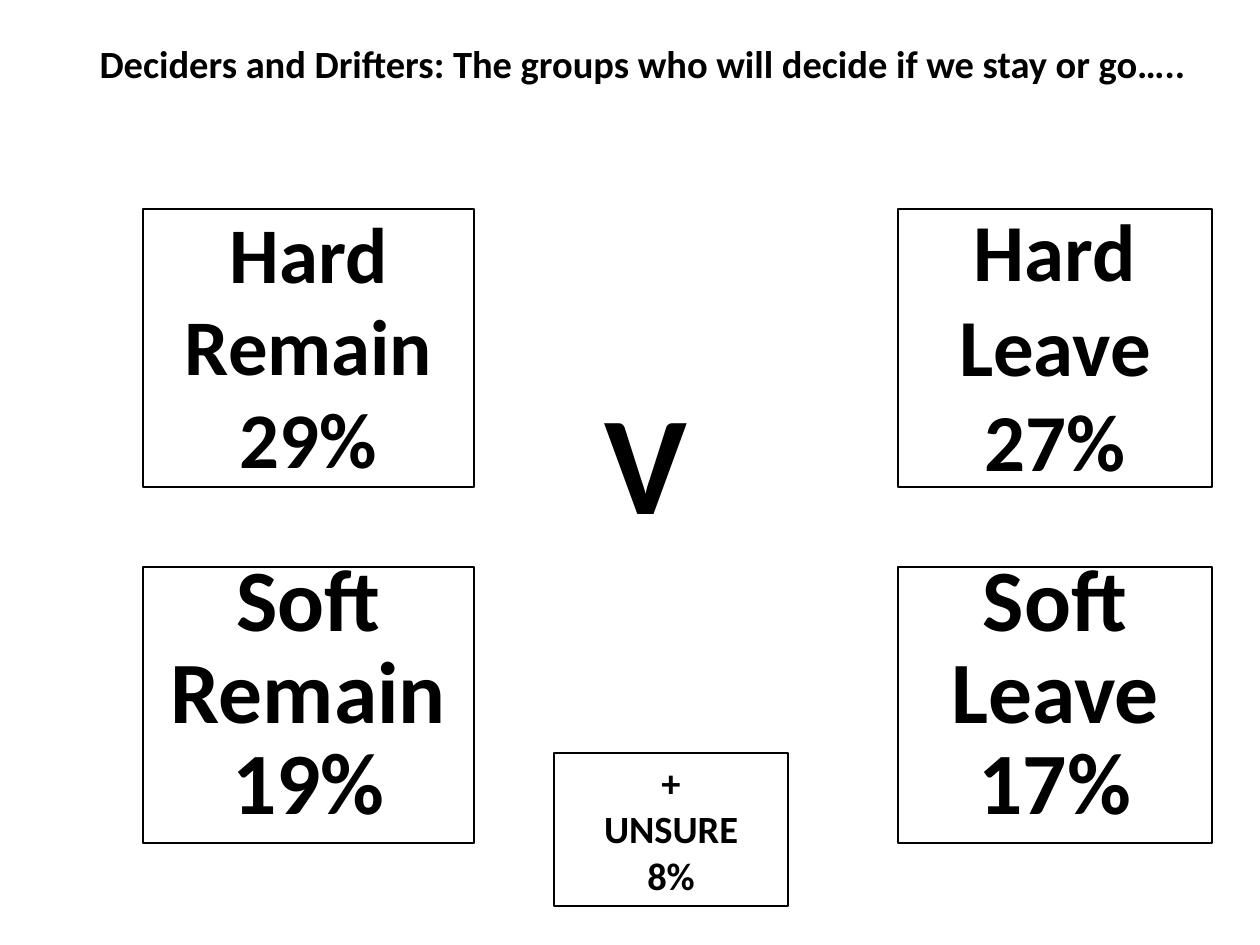
from pptx import Presentation
from pptx.dml.color import RGBColor
from pptx.enum.shapes import MSO_SHAPE
from pptx.enum.text import MSO_ANCHOR, MSO_AUTO_SIZE, PP_ALIGN
from pptx.util import Emu, Pt

COLORS = {"ink": "000000", "paper": "FFFFFF"}
EMU_PER_PX = 914400 / 126


def px(n):
    return Emu(round(n * EMU_PER_PX))


class Deck:
    font = "Calibri"

    def __init__(self, width, height):
        self.prs = Presentation()
        self.prs.slide_width, self.prs.slide_height = px(width), px(height)
        self.s = self.prs.slides.add_slide(self.prs.slide_layouts[5])

    def color(self, name):
        return RGBColor.from_string(COLORS[name])

    def add_run(self, p, text, size):
        r = p.add_run()
        r.text = text
        r.font.name, r.font.size, r.font.bold = self.font, Pt(size), True
        r.font.color.rgb = self.color("ink")

    def frame(self, sp, anchor):
        tf = sp.text_frame
        tf.word_wrap = True
        tf.auto_size = MSO_AUTO_SIZE.NONE
        tf.vertical_anchor = anchor
        return tf

    def add_lines(self, tf, lines, size, align=PP_ALIGN.CENTER, spacing=1.0, before=0):
        for i, line in enumerate(lines):
            p = tf.add_paragraph() if i else tf.paragraphs[0]
            p.alignment, p.line_spacing, p.space_before = align, spacing, Pt(before)
            self.add_run(p, line, size)

    def outline(self, sp):
        sp.fill.solid()
        sp.fill.fore_color.rgb = self.color("paper")
        sp.line.color.rgb = self.color("ink")
        sp.line.width = Pt(0.75)

    def title(self, x, y, w, h, lines, size, spacing):
        sp = self.s.shapes.title
        sp.left, sp.top, sp.width, sp.height = map(px, (x, y, w, h))
        self.outline(sp)
        p = self.frame(sp, MSO_ANCHOR.MIDDLE).paragraphs[0]
        p.alignment, p.line_spacing = PP_ALIGN.CENTER, spacing
        for i, line in enumerate(lines):
            if i:
                p.add_line_break()
            self.add_run(p, line, size)

    def box(self, x, y, w, h, lines, size, anchor=MSO_ANCHOR.TOP, **style):
        sp = self.s.shapes.add_shape(MSO_SHAPE.RECTANGLE, *map(px, (x, y, w, h)))
        sp.shadow.inherit = False
        self.outline(sp)
        self.add_lines(self.frame(sp, anchor), lines, size, **style)

    def label(self, x, y, w, h, line, size, align):
        sp = self.s.shapes.add_textbox(*map(px, (x, y, w, h)))
        self.add_lines(self.frame(sp, MSO_ANCHOR.TOP), [line], size, align)


def main():
    deck = Deck(1260, 945)
    remain_x, remain_w = 143, 331
    leave_x, leave_w = 898, 314
    hard_y, hard_h = 209, 278
    soft_y, soft_h = 567, 276

    deck.title(remain_x, hard_y, remain_w, hard_h, ["Hard", "Remain", "29%"], 45, 0.98)
    for x, w, side, share in [
        (remain_x, remain_w, "Remain", "19%"),
        (leave_x, leave_w, "Leave", "17%"),
    ]:
        deck.box(x, soft_y, w, soft_h, ["Soft", side, share], 50, spacing=0.7, before=10)
    deck.box(leave_x, hard_y, leave_w, hard_h, ["Hard", "Leave", "27%"], 46.2,
             MSO_ANCHOR.MIDDLE, spacing=0.98)
    deck.label(592, 368, 112, 183, "V", 80, PP_ALIGN.LEFT)
    deck.box(554, 753, 234, 153, ["+", "UNSURE", "8%"], 22)
    deck.label(76, 34, 1133, 59,
               "Deciders and Drifters: The groups who will decide if we stay or go…..",
               22, PP_ALIGN.CENTER)
    deck.prs.save("out.pptx")


if __name__ == "__main__":
    main()
